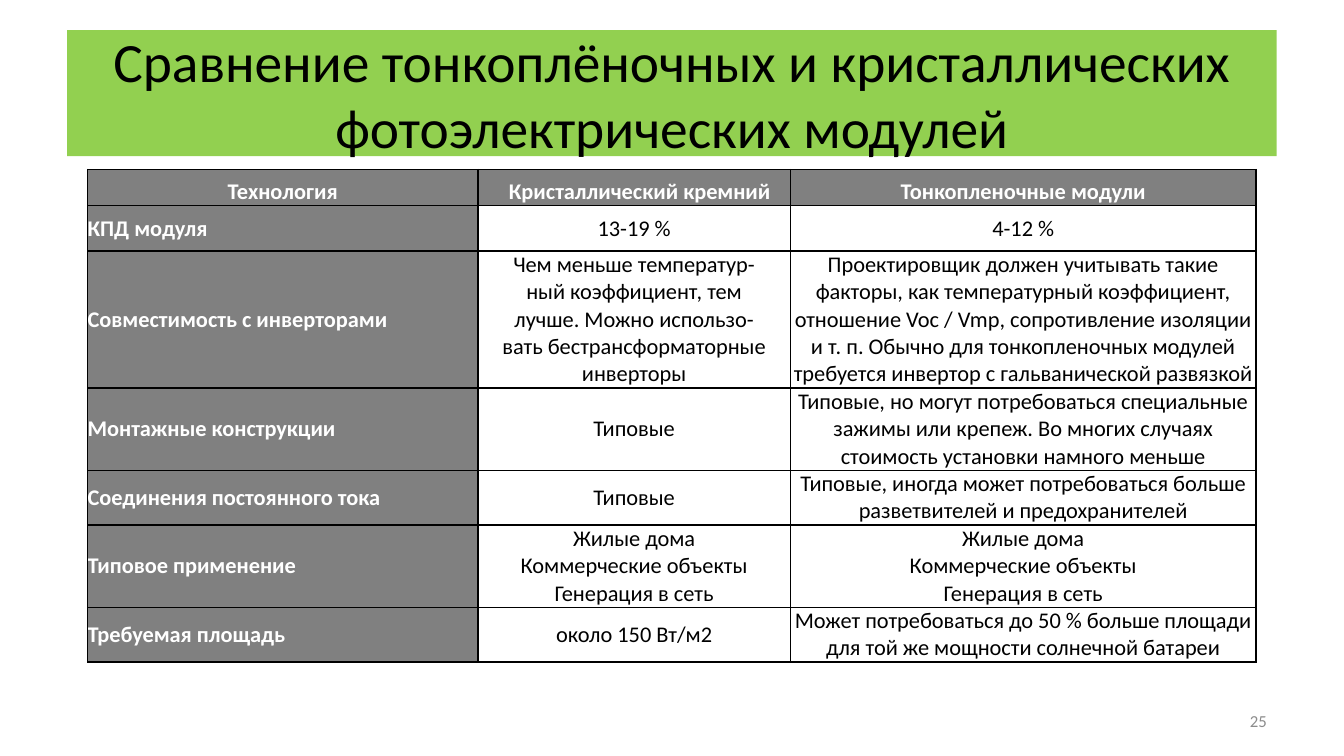
from dataclasses import dataclass

from lxml import etree
from pptx import Presentation
from pptx.dml.color import RGBColor
from pptx.enum.text import MSO_ANCHOR, MSO_AUTO_SIZE, PP_ALIGN
from pptx.oxml.ns import qn
from pptx.util import Pt

LEFT, MID, RIGHT, FULL = PP_ALIGN.LEFT, PP_ALIGN.CENTER, PP_ALIGN.RIGHT, PP_ALIGN.JUSTIFY
CENTRE, BOTTOM = MSO_ANCHOR.MIDDLE, MSO_ANCHOR.BOTTOM
NO_FIT = MSO_AUTO_SIZE.NONE


@dataclass(frozen=True)
class Theme:
    font: str = "Calibri"
    green: str = "92D050"
    grey: str = "808080"
    pale: str = "8C8C8C"
    white: str = "FFFFFF"
    black: str = "000000"
    title: float = 39.6
    body: float = 16
    note: float = 12
    edge: float = 1


@dataclass(frozen=True)
class Row:
    high: float
    label: str
    solid: str
    thin: str
    gap: float = 15


THEME = Theme()
WIDTHS = (278.8, 223.2, 332.6)
USES = "Жилые дома\nКоммерческие объекты\nГенерация в сеть"
ROWS = (
    Row(25.9, "Технология", "Кристаллический кремний", "Тонкопленочные модули"),
    Row(32.4, "КПД модуля", "13-19 %", "4-12 %", gap=0),
    Row(97.6, "Совместимость с инверторами",
        "Чем меньше температур-\nный коэффициент, тем\nлучше. Можно использо-\n"
        "вать бестрансформаторные\nинверторы",
        "Проектировщик должен учитывать такие факторы, как температурный коэффициент, "
        "отношение Voc / Vmp, сопротивление изоляции\nи т. п. Обычно для тонкопленочных "
        "модулей требуется инвертор с гальванической развязкой"),
    Row(58.5, "Монтажные конструкции", "Типовые",
        "Типовые, но могут потребоваться специальные зажимы или крепеж. "
        "Во многих случаях стоимость установки намного меньше"),
    Row(39, "Соединения постоянного тока", "Типовые",
        "Типовые, иногда может потребоваться больше разветвителей и предохранителей"),
    Row(58.5, "Типовое применение", USES, USES),
    Row(39, "Требуемая площадь", "около 150 Вт/м2",
        "Может потребоваться до 50 % больше площади для той же мощности солнечной батареи"),
)


def paint(fill, tone: str) -> None:
    fill.solid()
    fill.fore_color.rgb = RGBColor.from_string(tone)


def write(frame, text: str, *, size: float, tone: str = THEME.black, bold: bool = False,
          align=MID, gap: float = 0, indent: float = 0) -> None:
    para = frame.paragraphs[0]
    para.text = text
    para.alignment = align
    para.space_before = Pt(gap)
    if indent:
        para._p.get_or_add_pPr().set("marL", str(int(Pt(indent))))
    for run in para.runs:
        font = run.font
        font.name, font.size, font.bold = THEME.font, Pt(size), bold
        font.color.rgb = RGBColor.from_string(tone)


def frame_cell(cell) -> None:
    props = cell._tc.get_or_add_tcPr()
    for side in ("lnL", "lnR", "lnT", "lnB"):
        line = etree.SubElement(props, qn(f"a:{side}"), w=str(int(Pt(THEME.edge))))
        fill = etree.SubElement(line, qn("a:solidFill"))
        etree.SubElement(fill, qn("a:srgbClr"), val=THEME.black)


def add_title(slide, text: str) -> None:
    title = slide.shapes.title
    title.left, title.top, title.width, title.height = Pt(48), Pt(21.6), Pt(864), Pt(90)
    paint(title.fill, THEME.green)
    frame = title.text_frame
    frame.auto_size, frame.vertical_anchor = NO_FIT, CENTRE
    write(frame, text, size=THEME.title)


def add_grid(slide) -> None:
    high = sum(row.high for row in ROWS)
    table = slide.shapes.add_table(len(ROWS), len(WIDTHS), Pt(62.6), Pt(121),
                                   Pt(sum(WIDTHS)), Pt(high)).table
    table.horz_banding = False
    for col, width in zip(table.columns, WIDTHS):
        col.width = Pt(width)
    for r, row in enumerate(ROWS):
        table.rows[r].height = Pt(row.high)
        for c, text in enumerate((row.label, row.solid, row.thin)):
            cell = table.cell(r, c)
            head = r == 0 or c == 0
            cell.margin_left = cell.margin_right = Pt(0)
            cell.margin_top = cell.margin_bottom = Pt(0)
            cell.vertical_anchor = BOTTOM if r == 0 else CENTRE
            frame_cell(cell)
            if head:
                paint(cell.fill, THEME.grey)
            else:
                cell.fill.background()
            write(cell.text_frame, text, size=THEME.body, bold=head, gap=row.gap,
                  tone=THEME.white if head else THEME.black,
                  align=FULL if r and c == 0 else MID,
                  indent=8 if (r, c) == (0, 1) else 0)


def add_number(slide, text: str) -> None:
    box = slide.shapes.add_textbox(Pt(688), Pt(500.5), Pt(224), Pt(28.8))
    frame = box.text_frame
    frame.word_wrap, frame.vertical_anchor = True, CENTRE
    write(frame, text, size=THEME.note, tone=THEME.pale, align=RIGHT)


def main() -> None:
    deck = Presentation()
    deck.slide_width, deck.slide_height = Pt(960), Pt(540)
    # Title-only layout
    slide = deck.slides.add_slide(deck.slide_layouts[5])
    add_title(slide, "Сравнение тонкоплёночных и кристаллических фотоэлектрических модулей")
    # Comparison table and page number
    add_grid(slide)
    add_number(slide, "25")
    deck.save("out.pptx")


if __name__ == "__main__":
    main()
